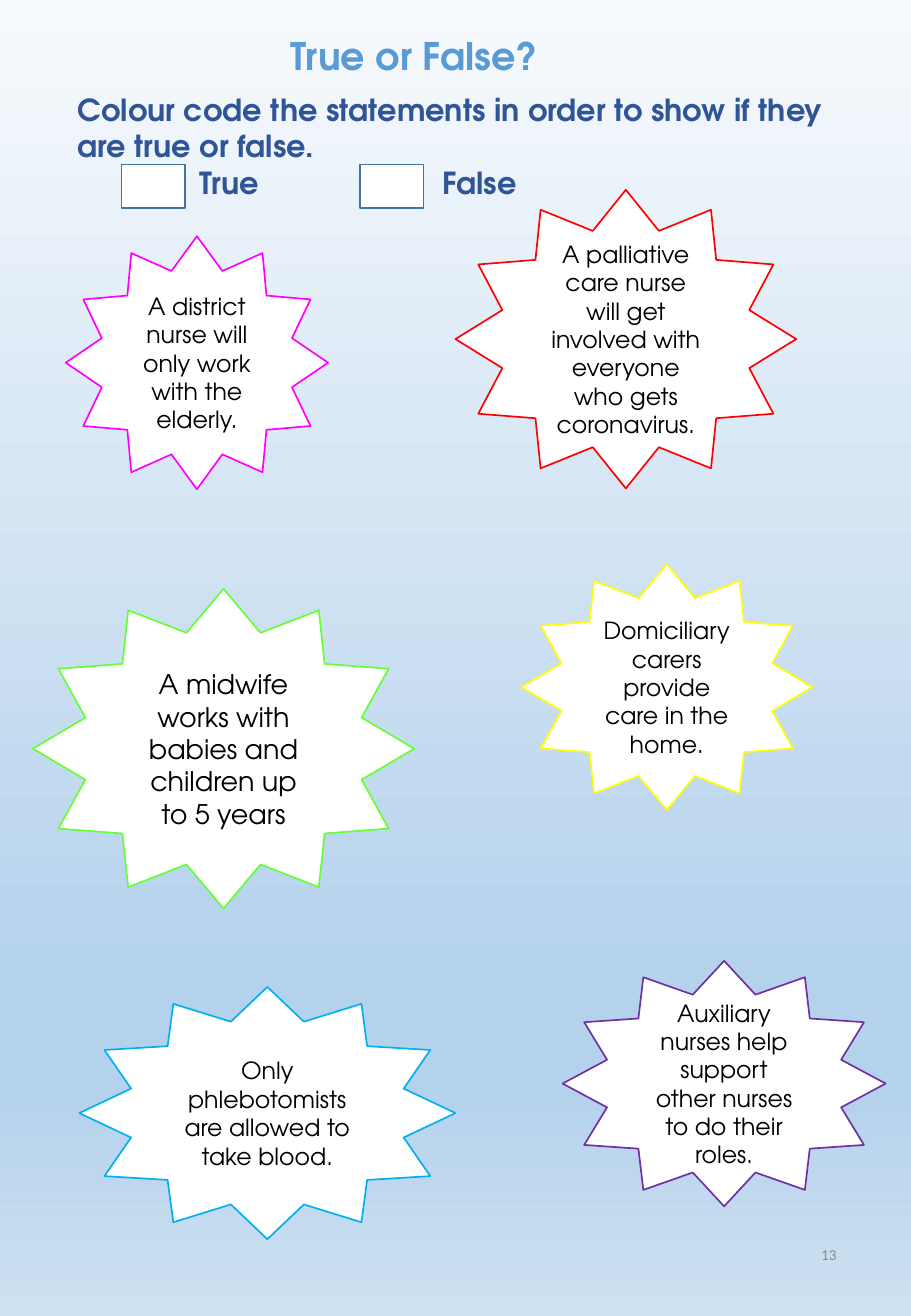
from copy import deepcopy
from dataclasses import dataclass

from lxml.etree import SubElement
from pptx import Presentation
from pptx.dml.color import RGBColor
from pptx.enum.shapes import MSO_SHAPE
from pptx.enum.text import MSO_ANCHOR, PP_ALIGN
from pptx.oxml.ns import qn
from pptx.util import Pt


@dataclass(frozen=True)
class Theme:
    """Colours, typefaces and type sizes of the worksheet."""
    sky: tuple = ((0, "F7FAFD"), (74, "B5D2EC"), (83, "B5D2EC"), (100, "CEE1F2"))
    title: str = "5B9BD5"
    instruction: str = "2F5597"
    tick_border: str = "43739E"
    paper: str = "FFFFFF"
    ink: str = "000000"
    page_number: str = "8C8C8C"
    display_face: str = "TeX Gyre Adventor"
    number_face: str = "Calibri"
    title_size: float = 22.5
    instruction_size: float = 18
    statement_size: float = 14
    large_statement_size: float = 16
    number_size: float = 9


THEME = Theme()

STATEMENTS = (
    ((39, 140, 155.5, 150), "FF00FF", THEME.statement_size,
     "A district nurse will only work with the elderly."),
    ((333.5, 569.5, 191.5, 145.5), "7030A0", THEME.statement_size,
     "Auxiliary nurses help support other nurses to do their roles."),
    ((270, 112.5, 202, 177), "FF0000", THEME.statement_size,
     "A palliative care nurse will get involved with everyone who gets coronavirus."),
    ((47, 585, 223, 149.5), "00B0F0", THEME.statement_size,
     "Only phlebotomists are allowed to take blood."),
    ((309, 334.5, 172.5, 145.5), "FFFF00", THEME.statement_size,
     "Domiciliary carers provide care in the home."),
    ((19.5, 349, 226, 189.5), "66FF33", THEME.large_statement_size,
     "A midwife works with babies and children up to 5 years"),
)


def style(paragraph, size, colour, bold=False, face=THEME.display_face,
          align=PP_ALIGN.LEFT):
    """Give a paragraph its font and alignment."""
    paragraph.alignment = align
    font = paragraph.font
    font.name, font.size, font.bold = face, Pt(size), bold
    font.color.rgb = RGBColor.from_string(colour)


def add_outlined(slide, preset, box, border):
    """Add a white preset shape with a thin coloured border."""
    shape = slide.shapes.add_shape(preset, *map(Pt, box))
    shape.shadow.inherit = False
    shape.fill.solid()
    shape.fill.fore_color.rgb = RGBColor.from_string(THEME.paper)
    shape.line.color.rgb = RGBColor.from_string(border)
    shape.line.width = Pt(1)
    return shape


def paint_background(slide):
    """Fill the background with the vertical sky gradient."""
    fill = slide.background.fill
    fill.gradient()
    fill.gradient_angle = 270
    stops = slide.background._cSld.find(".//" + qn("a:gsLst"))
    for stop in list(stops):
        stops.remove(stop)
    for position, colour in THEME.sky:
        stop = SubElement(stops, qn("a:gs"), pos=str(position * 1000))
        SubElement(stop, qn("a:srgbClr"), val=colour)


def add_statement(slide, box, border, size, wording):
    """Add one statement centred in a twelve-pointed star."""
    star = add_outlined(slide, MSO_SHAPE.STAR_12_POINT, box, border)
    frame = star.text_frame
    frame.word_wrap = True
    frame.vertical_anchor = MSO_ANCHOR.MIDDLE
    frame.text = wording
    style(frame.paragraphs[0], size, THEME.ink, align=PP_ALIGN.CENTER)


def add_title(slide, box):
    """Add the worksheet title."""
    frame = slide.shapes.add_textbox(*map(Pt, box)).text_frame
    frame.word_wrap = False
    frame.text = "True or False?"
    style(frame.paragraphs[0], THEME.title_size, THEME.title, True,
          align=PP_ALIGN.CENTER)


def add_instruction(slide, box):
    """Add the instruction and its colour key of two tick boxes."""
    left, top, width, height = box
    frame = slide.shapes.add_textbox(*map(Pt, box)).text_frame
    frame.word_wrap = True
    frame.text = ("Colour code the statements in order to show if they "
                  "are true or false.\n\tTrue\tFalse")
    for paragraph in frame.paragraphs:
        style(paragraph, THEME.instruction_size, THEME.instruction, True)
    properties = frame.paragraphs[1]._p.get_or_add_pPr()
    tabs = SubElement(properties, qn("a:tabLst"))
    for label_offset in (72, 216):
        SubElement(tabs, qn("a:tab"), pos=str(Pt(label_offset)), algn="l")
    properties.insert(0, tabs)
    for tick_offset in (33, 174.5):
        tick_box = (left + tick_offset, top + 47, 37.5, 26)
        add_outlined(slide, MSO_SHAPE.RECTANGLE, tick_box, THEME.tick_border)


def add_page_number(slide, box):
    """Add the page number at the bottom right."""
    frame = slide.shapes.add_textbox(*map(Pt, box)).text_frame
    frame.word_wrap = True
    frame.vertical_anchor = MSO_ANCHOR.MIDDLE
    frame.text = "13"
    style(frame.paragraphs[0], THEME.number_size, THEME.page_number,
          face=THEME.number_face, align=PP_ALIGN.RIGHT)


def main():
    """Build and save the worksheet."""
    worksheet = Presentation()
    worksheet.slide_width, worksheet.slide_height = Pt(540), Pt(780)
    slide = worksheet.slides.add_slide(worksheet.slide_layouts[6])
    paint_background(slide)
    for statement in STATEMENTS:
        add_statement(slide, *statement)
    add_title(slide, (161, 16, 169, 34.5))
    add_instruction(slide, (39, 50.5, 461.5, 72.5))
    add_page_number(slide, (381.5, 723, 121.5, 41.5))
    worksheet.save("out.pptx")


if __name__ == "__main__":
    main()
